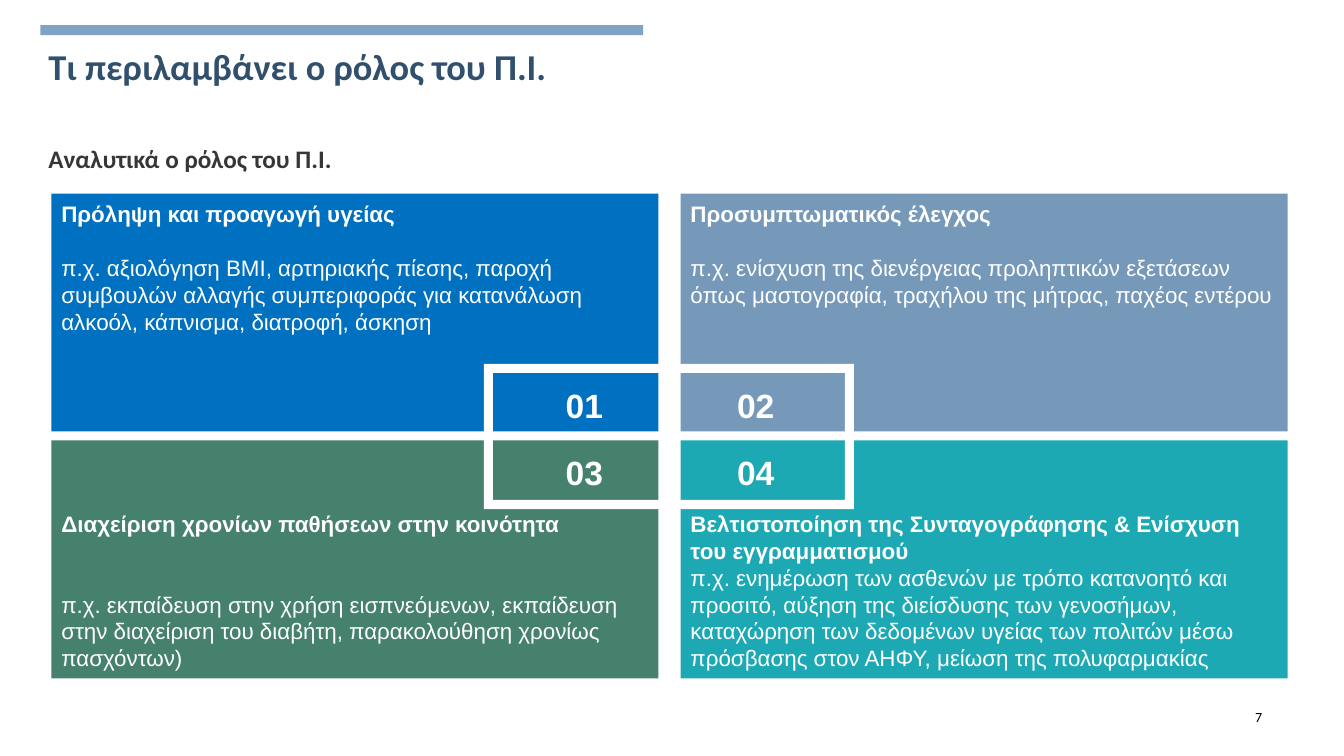
from pptx import Presentation
from pptx.dml.color import RGBColor
from pptx.enum.shapes import MSO_SHAPE
from pptx.enum.text import MSO_ANCHOR, PP_ALIGN
from pptx.util import Inches, Pt

WHITE = RGBColor(0xFF, 0xFF, 0xFF)
BLACK = RGBColor(0x00, 0x00, 0x00)
BAR_BLUE = RGBColor(0x7E, 0xA3, 0xC6)
TITLE_BLUE = RGBColor(0x31, 0x50, 0x6D)
DARK_GREY = RGBColor(0x36, 0x36, 0x36)
BLUE = RGBColor(0x00, 0x70, 0xC0)
STEEL = RGBColor(0x76, 0x99, 0xBA)
GREEN = RGBColor(0x45, 0x81, 0x6C)
TEAL = RGBColor(0x1C, 0xA9, 0xB4)

# Content
TITLE = "Τι περιλαμβάνει ο ρόλος του Π.Ι."
SUBTITLE = "Αναλυτικά ο ρόλος του Π.Ι."
PAGE_NUMBER = "7"
# Number, fill, heading, example, gap in points between heading and example
ROLES = [
    ("01", BLUE, "Πρόληψη και προαγωγή υγείας",
     "π.χ. αξιολόγηση BMI, αρτηριακής πίεσης, παροχή συμβουλών αλλαγής "
     "συμπεριφοράς για κατανάλωση αλκοόλ, κάπνισμα, διατροφή, άσκηση", 19),
    ("02", STEEL, "Προσυμπτωματικός έλεγχος",
     "π.χ. ενίσχυση της διενέργειας προληπτικών εξετάσεων όπως "
     "μαστογραφία, τραχήλου της μήτρας, παχέος εντέρου", 19),
    ("03", GREEN, "Διαχείριση χρονίων παθήσεων στην κοινότητα",
     "π.χ. εκπαίδευση στην χρήση εισπνεόμενων, εκπαίδευση στην διαχείριση "
     "του διαβήτη, παρακολούθηση χρονίως πασχόντων)", 38),
    ("04", TEAL, "Βελτιστοποίηση της Συνταγογράφησης & Ενίσχυση του εγγραμματισμού",
     "π.χ. ενημέρωση των ασθενών με τρόπο κατανοητό και προσιτό, αύξηση της "
     "διείσδυσης των γενοσήμων, καταχώρηση των δεδομένων υγείας των πολιτών "
     "μέσω πρόσβασης στον ΑΗΦΥ, μείωση της πολυφαρμακίας", 0),
]

# Two by two grid
PANEL_LEFT, PANEL_TOP, PANEL_WIDTH, PANEL_HEIGHT = 0.51, 1.92, 6.02, 2.36
COLUMN_STEP, ROW_STEP = 6.24, 2.45
NUMBER_LEFT, NUMBER_TOP, NUMBER_COLUMN_STEP, NUMBER_ROW_STEP = 5.24, 3.82, 1.7, 0.66


def place(*lengths):
    return [Inches(length) for length in lengths]


def add_block(slide, preset, box, fill):
    shape = slide.shapes.add_shape(preset, *place(*box))
    shape.shadow.inherit = False
    shape.fill.solid()
    shape.fill.fore_color.rgb = fill
    shape.line.fill.background()
    return shape


def set_frame(text_frame, margins, anchor):
    text_frame.word_wrap = True
    text_frame.vertical_anchor = anchor
    (text_frame.margin_left, text_frame.margin_top,
     text_frame.margin_right, text_frame.margin_bottom) = place(*margins)


def style(paragraph, font_name, size, color, bold, align=PP_ALIGN.LEFT):
    paragraph.alignment = align
    for run in paragraph.runs:
        run.font.name = font_name
        run.font.size = Pt(size)
        run.font.color.rgb = color
        run.font.bold = bold


def add_text(slide, text, box, margins, anchor, *text_style):
    text_frame = slide.shapes.add_textbox(*place(*box)).text_frame
    set_frame(text_frame, margins, anchor)
    paragraph = text_frame.paragraphs[0]
    paragraph.text = text
    style(paragraph, *text_style)
    return paragraph


def main():
    presentation = Presentation()
    presentation.slide_width, presentation.slide_height = place(13.33, 7.5)
    slide = presentation.slides.add_slide(presentation.slide_layouts[6])

    # Heading and page number
    add_block(slide, MSO_SHAPE.RECTANGLE, (0.4, 0.25, 5.98, 0.1), BAR_BLUE)
    heading_margins = (0.12, 0.05, 0.1, 0.05)
    title = add_text(slide, TITLE, (0.36, 0.44, 12.4, 0.91), heading_margins,
                     MSO_ANCHOR.TOP, "Calibri", 26, TITLE_BLUE, True)
    title.line_spacing = 0.9
    add_text(slide, SUBTITLE, (0.36, 1.37, 12.4, 0.4), heading_margins,
             MSO_ANCHOR.MIDDLE, "Calibri", 18, DARK_GREY, True)
    add_text(slide, PAGE_NUMBER, (12.35, 6.97, 0.57, 0.28), (0.1, 0.1, 0.1, 0.1),
             MSO_ANCHOR.MIDDLE, "Calibri", 10, BLACK, False)

    # Role panels
    for index, (number, fill, heading, example, gap) in enumerate(ROLES):
        row, column = divmod(index, 2)
        panel = add_block(slide, MSO_SHAPE.RECTANGLE,
                          (PANEL_LEFT + column * COLUMN_STEP, PANEL_TOP + row * ROW_STEP,
                           PANEL_WIDTH, PANEL_HEIGHT), fill)
        text_frame = panel.text_frame
        set_frame(text_frame, (0.1, 0.07, 0.1, 0.07),
                  MSO_ANCHOR.BOTTOM if row else MSO_ANCHOR.TOP)
        text_frame.text = f"{heading}\n{example}"
        heading_paragraph, example_paragraph = text_frame.paragraphs
        style(heading_paragraph, "Arial", 16, WHITE, True)
        style(example_paragraph, "Arial", 16, WHITE, False)
        example_paragraph.space_before = Pt(gap)

    # Central frame with the role numbers
    frame = add_block(slide, MSO_SHAPE.FRAME, (4.8, 3.61, 3.67, 1.44), WHITE)
    frame.adjustments[0] = 0.062
    for index, (number, *_) in enumerate(ROLES):
        row, column = divmod(index, 2)
        add_text(slide, number,
                 (NUMBER_LEFT + column * NUMBER_COLUMN_STEP,
                  NUMBER_TOP + row * NUMBER_ROW_STEP, 1.11, 0.37),
                 (0, 0, 0, 0), MSO_ANCHOR.TOP, "Arial", 24, WHITE, True, PP_ALIGN.CENTER)

    presentation.save("out.pptx")


if __name__ == "__main__":
    main()
